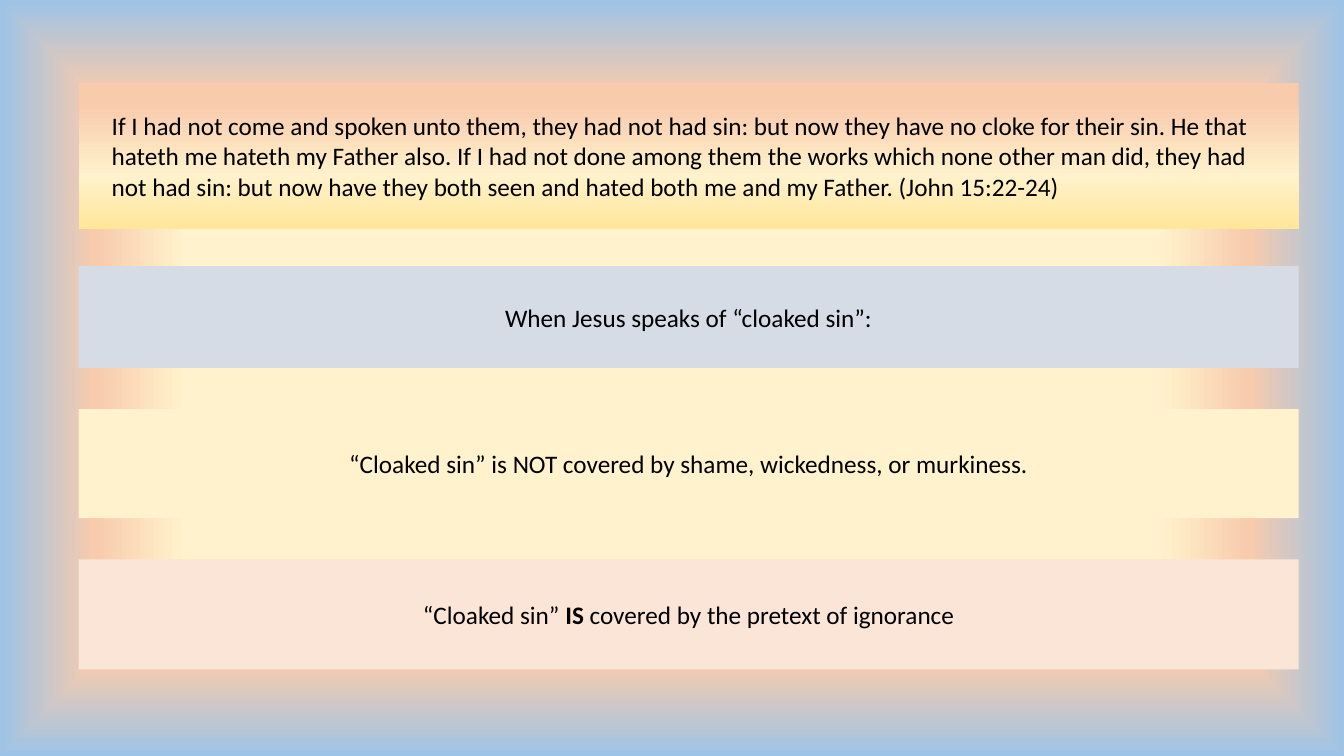
"""Build a slide of four full-width bands on cloaked sin."""
from lxml import etree
from pptx import Presentation
from pptx.dml.color import RGBColor as RGB
from pptx.enum.shapes import MSO_SHAPE as SHAPE
from pptx.enum.text import MSO_ANCHOR as ANCHOR, PP_ALIGN as ALIGN
from pptx.oxml.ns import qn
from pptx.util import Inches, Pt

BLACK = RGB(0x00, 0x00, 0x00)
CREAM = RGB(0xFF, 0xF2, 0xCC)
PEACH = RGB(0xF8, 0xCB, 0xAD)
SKY = RGB(0x9D, 0xC3, 0xE6)
GOLD = RGB(0xFF, 0xE6, 0x99)
SLATE = RGB(0xD6, 0xDC, 0xE5)
BLUSH = RGB(0xFB, 0xE5, 0xD6)

LEFT, WIDE = 0.78, 12.1
PAD = 0.23

VERSE = (
    "If I had not come and spoken unto them, they had not had sin: but now they "
    "have no cloke for their sin. He that hateth me hateth my Father also. If I "
    "had not done among them the works which none other man did, they had not had "
    "sin: but now have they both seen and hated both me and my Father. "
    "(John 15:22-24)"
)
BANDS = [
    (2.64, 1.01, SLATE, [("When Jesus speaks of “cloaked sin”:", False)]),
    (4.06, 1.08, CREAM, [
        ("“Cloaked sin” is NOT covered by shame, wickedness, or murkiness.", False)]),
    (5.55, 1.09, BLUSH, [
        ("“Cloaked sin” ", False), ("IS", True),
        (" covered by the pretext of ignorance", False)]),
]


def blend(fill, root, stops):
    """Give the fill a gradient with the stops and return its element."""
    fill.gradient()
    grad = next(root.iter(qn("a:gradFill")))
    grad.clear()
    row = etree.SubElement(grad, qn("a:gsLst"))
    for share, tint in stops:
        stop = etree.SubElement(row, qn("a:gs"), pos=str(share * 1000))
        etree.SubElement(stop, qn("a:srgbClr"), val=str(tint))
    return grad


def write(shape, runs, align):
    """Add the runs to the shape as one paragraph."""
    frame = shape.text_frame
    frame.word_wrap = True
    frame.vertical_anchor = ANCHOR.MIDDLE
    para = frame.paragraphs[0]
    para.alignment = align
    for text, bold in runs:
        run = para.add_run()
        run.text = text
        run.font.name = "Calibri"
        run.font.size = Pt(18)
        run.font.bold = bold
        run.font.color.rgb = BLACK


deck = Presentation()
deck.slide_width, deck.slide_height = Inches(13.33), Inches(7.5)
slide = deck.slides.add_slide(deck.slide_layouts[6])

grad = blend(slide.background.fill, slide.element,
             [(51, CREAM), (75, PEACH), (100, SKY)])
glow = etree.SubElement(grad, qn("a:path"), path="rect")
etree.SubElement(glow, qn("a:fillToRect"), l="50000", t="50000", r="50000", b="50000")

top, high = 0.82, 1.45
panel = slide.shapes.add_shape(
    SHAPE.RECTANGLE, Inches(LEFT), Inches(top), Inches(WIDE), Inches(high))
panel.shadow.inherit = False
panel.line.fill.background()
grad = blend(panel.fill, panel.element, [(14, PEACH), (64, CREAM), (100, GOLD)])
etree.SubElement(grad, qn("a:lin"), ang="5400000", scaled="0")

verse = slide.shapes.add_textbox(
    Inches(LEFT + PAD), Inches(top + PAD),
    Inches(WIDE - 2 * PAD), Inches(high - 2 * PAD))
write(verse, [(VERSE, False)], ALIGN.LEFT)

for top, high, tint, runs in BANDS:
    band = slide.shapes.add_shape(
        SHAPE.RECTANGLE, Inches(LEFT), Inches(top), Inches(WIDE), Inches(high))
    band.shadow.inherit = False
    band.line.fill.background()
    band.fill.solid()
    band.fill.fore_color.rgb = tint
    write(band, runs, ALIGN.CENTER)

deck.save("out.pptx")
